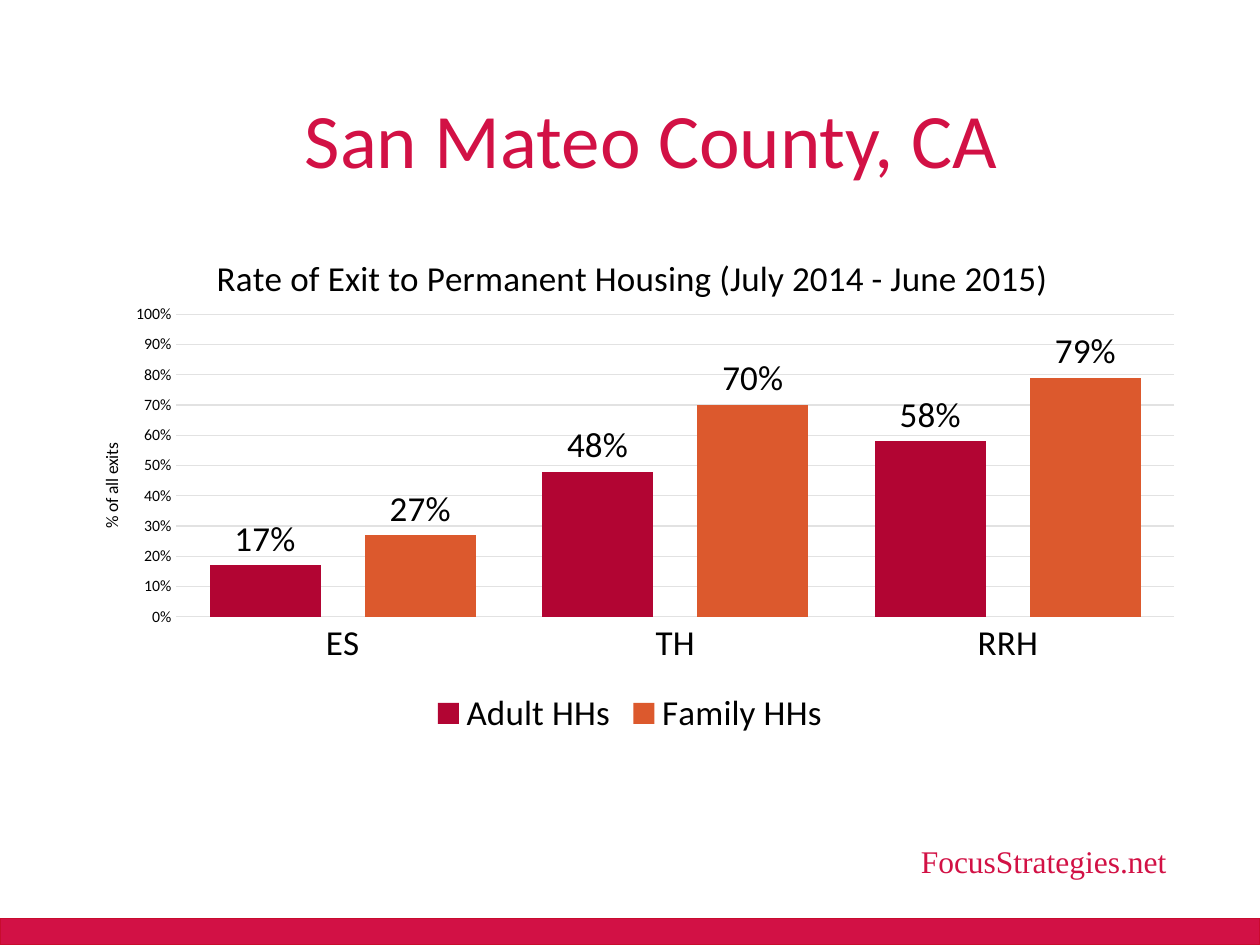
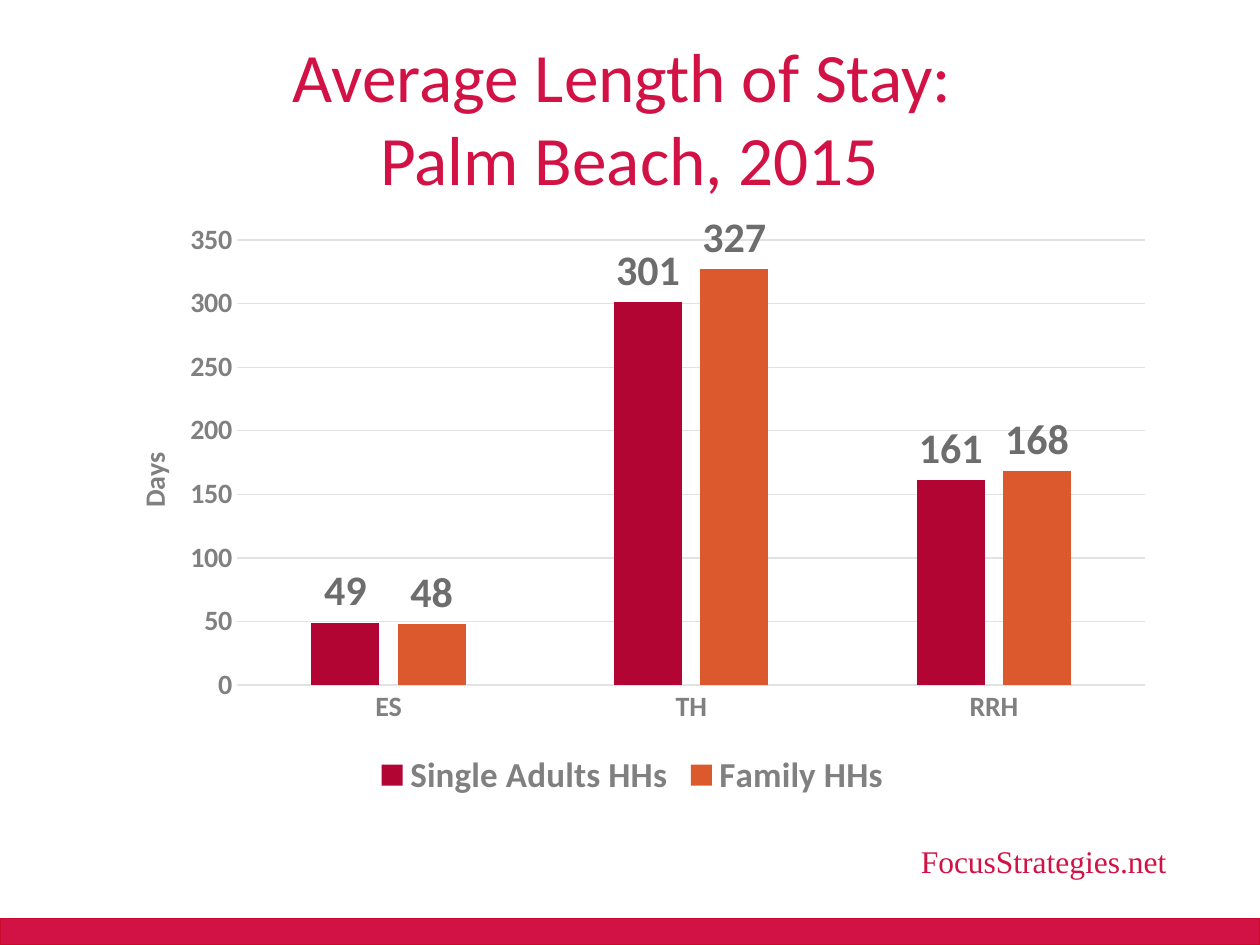
from dataclasses import dataclass
from typing import Any

import lxml.etree
import pptx
import pptx.chart.data
import pptx.dml.color
import pptx.enum.chart
import pptx.enum.shapes
import pptx.enum.text
import pptx.oxml.ns
import pptx.util

EMU_PER_PX = 9144  # 100 px to the inch
SLIDE_WIDTH, SLIDE_HEIGHT = 1000, 750


@dataclass(frozen=True)
class Theme:
    red: str = "D21145"
    band_edge: str = "C80C2E"
    grid: str = "E2E2E2"
    series: tuple[str, ...] = ("B20533", "DC592D")
    black: str = "000000"
    gray: str = "808080"
    dark_gray: str = "6D6D6D"
    sans: str = "Calibri"
    serif: str = "Times New Roman"
    footer_size: float = 18
    legend_size: float = 20
    chart_title_size: float = 20
    hairline: float = 0.75


THEME = Theme()


@dataclass(frozen=True)
class Box:
    left: int
    top: int
    width: int
    height: int

    def emu(self) -> list[int]:
        return [px(n) for n in (self.left, self.top, self.width, self.height)]


@dataclass(frozen=True)
class TextStyle:
    size: float
    color: str
    bold: bool = False
    name: str = THEME.sans


@dataclass(frozen=True)
class BarChart:
    box: Box
    categories: tuple[str, ...]
    series: dict[str, tuple[float, ...]]
    number_format: str
    maximum: float
    step: float
    gap: int
    overlap: int
    axis_title: str
    axis_title_style: TextStyle
    category_style: TextStyle
    value_style: TextStyle
    label_style: TextStyle
    legend_style: TextStyle
    plot_place: dict[str, float]
    axis_title_place: dict[str, float]
    title: str = ""


@dataclass(frozen=True)
class ChartPage:
    title: str
    title_box: Box
    title_size: float
    chart: BarChart


def px(length: int) -> int:
    return length * EMU_PER_PX


def rgb(color: str) -> pptx.dml.color.RGBColor:
    return pptx.dml.color.RGBColor.from_string(color)


def assign(target: Any, values: dict[str, Any]) -> None:
    for key, value in values.items():
        setattr(target, key, value)


def set_font(font: Any, style: TextStyle) -> None:
    assign(font, {"name": style.name, "size": pptx.util.Pt(style.size), "bold": style.bold})
    font.color.rgb = rgb(style.color)


def set_line(line: Any, color: str) -> None:
    line.color.rgb = rgb(color)
    line.width = pptx.util.Pt(THEME.hairline)


def write(frame: Any, text: str, style: TextStyle) -> Any:
    para = frame.paragraphs[0]
    para.text = text
    for span in para.runs:
        set_font(span.font, style)
    return para


def place(element: Any, position: dict[str, float]) -> None:
    """Give a chart part a fixed position, in fractions of the chart's size."""
    tag = pptx.oxml.ns.qn
    layout = element.find(tag("c:layout"))
    if layout is None:
        layout = lxml.etree.Element(tag("c:layout"))
        text = element.find(tag("c:tx"))
        element.insert(0 if text is None else 1, layout)
    for child in list(layout):
        layout.remove(child)
    manual = lxml.etree.SubElement(layout, tag("c:manualLayout"))
    settings: dict[str, Any] = {"xMode": "edge", "yMode": "edge"} | position
    if "w" in position:
        settings = {"layoutTarget": "inner"} | settings
    for key, value in settings.items():
        lxml.etree.SubElement(manual, tag(f"c:{key}")).set("val", str(value))


def add_text(page: Any, box: Box, text: str, style: TextStyle) -> Any:
    frame = page.shapes.add_textbox(*box.emu()).text_frame
    write(frame, text, style)
    return frame


def add_footer(page: Any) -> None:
    style = TextStyle(THEME.footer_size, THEME.red, name=THEME.serif)
    frame = add_text(page, Box(721, 663, 217, 40), "FocusStrategies.net", style)
    assign(frame, {"word_wrap": False,
                   "auto_size": pptx.enum.text.MSO_AUTO_SIZE.SHAPE_TO_FIT_TEXT})
    band = page.shapes.add_shape(pptx.enum.shapes.MSO_SHAPE.RECTANGLE,
                                 *Box(0, 729, SLIDE_WIDTH, 21).emu())
    band.shadow.inherit = False
    band.fill.solid()
    band.fill.fore_color.rgb = rgb(THEME.red)
    set_line(band.line, THEME.band_edge)


def add_title(page: Any, text: str, box: Box, size: float) -> None:
    frame = add_text(page, box, text, TextStyle(size, THEME.red))
    assign(frame, {"word_wrap": True,
                   "vertical_anchor": pptx.enum.text.MSO_ANCHOR.MIDDLE})
    frame.paragraphs[0].alignment = pptx.enum.text.PP_ALIGN.CENTER


def format_axes(chart: Any, design: BarChart) -> None:
    category, value = chart.category_axis, chart.value_axis
    for axis, style in ((category, design.category_style), (value, design.value_style)):
        assign(axis, {"major_tick_mark": pptx.enum.chart.XL_TICK_MARK.NONE,
                      "minor_tick_mark": pptx.enum.chart.XL_TICK_MARK.NONE})
        set_font(axis.tick_labels.font, style)
    set_line(category.format.line, THEME.grid)
    value.format.line.fill.background()
    assign(value, {"minimum_scale": 0, "maximum_scale": design.maximum,
                   "major_unit": design.step, "has_major_gridlines": True})
    set_line(value.major_gridlines.format.line, THEME.grid)
    assign(value.tick_labels, {"number_format": design.number_format,
                               "number_format_is_linked": False})
    write(value.axis_title.text_frame, design.axis_title, design.axis_title_style)


def format_bars(plot: Any, design: BarChart) -> None:
    assign(plot, {"gap_width": design.gap, "overlap": design.overlap,
                  "vary_by_categories": False})
    for series, color in zip(plot.series, THEME.series):
        series.format.fill.solid()
        series.format.fill.fore_color.rgb = rgb(color)
        series.invert_if_negative = False
        labels = series.data_labels
        assign(labels, {"show_value": True, "number_format": design.number_format,
                        "number_format_is_linked": False,
                        "position": pptx.enum.chart.XL_LABEL_POSITION.OUTSIDE_END})
        set_font(labels.font, design.label_style)


def add_bar_chart(page: Any, design: BarChart) -> None:
    data = pptx.chart.data.CategoryChartData(number_format=design.number_format)
    data.categories = design.categories
    for name, values in design.series.items():
        data.add_series(name, values)
    chart = page.shapes.add_chart(pptx.enum.chart.XL_CHART_TYPE.COLUMN_CLUSTERED,
                                  *design.box.emu(), data).chart
    set_font(chart.font, design.axis_title_style)
    chart.has_title = bool(design.title)
    if design.title:
        write(chart.chart_title.text_frame, design.title,
              TextStyle(THEME.chart_title_size, THEME.black))
    chart.has_legend = True
    assign(chart.legend, {"position": pptx.enum.chart.XL_LEGEND_POSITION.BOTTOM,
                          "include_in_layout": False})
    set_font(chart.legend.font, design.legend_style)
    format_axes(chart, design)
    format_bars(chart.plots[0], design)

    root = chart._chartSpace
    place(root.xpath("c:chart/c:plotArea")[0], design.plot_place)
    axis_title = root.xpath(".//c:valAx/c:title")[0]
    place(axis_title, design.axis_title_place)
    axis_title.xpath(".//a:bodyPr")[0].set("rot", "-5400000")
    for title in root.xpath("c:chart/c:title"):
        place(title, {"x": 0.13, "y": 0.05})


PROGRAMS = ("ES", "TH", "RRH")
BOLD_GRAY = TextStyle(16, THEME.gray, True)
BLACK_LABEL = TextStyle(20, THEME.black)

PAGES = (
    ChartPage(
        "San Mateo County, CA", Box(67, 47, 900, 125), 44,
        BarChart(
            box=Box(50, 175, 900, 414),
            categories=PROGRAMS,
            series={"Adult HHs": (0.17, 0.48, 0.58), "Family HHs": (0.27, 0.70, 0.79)},
            number_format="0%", maximum=1, step=0.1, gap=60, overlap=-40,
            axis_title="% of all exits",
            axis_title_style=TextStyle(10, THEME.black),
            category_style=BLACK_LABEL,
            value_style=TextStyle(9, THEME.black),
            label_style=BLACK_LABEL,
            legend_style=TextStyle(THEME.legend_size, THEME.black),
            plot_place={"x": 0.1, "y": 0.18, "w": 0.88, "h": 0.58},
            axis_title_place={"x": 0.03, "y": 0.42},
            title="Rate of Exit to Permanent Housing (July 2014 - June 2015)",
        ),
    ),
    ChartPage(
        "Average Length of Stay: \vPalm Beach, 2015", Box(50, 30, 900, 125), 39.6,
        BarChart(
            box=Box(78, 167, 848, 471),
            categories=PROGRAMS,
            series={"Single Adults HHs": (49, 301, 161), "Family HHs": (48, 327, 168)},
            number_format="0", maximum=350, step=50, gap=219, overlap=-27,
            axis_title="Days",
            axis_title_style=BOLD_GRAY,
            category_style=BOLD_GRAY,
            value_style=BOLD_GRAY,
            label_style=TextStyle(24, THEME.dark_gray, True),
            legend_style=TextStyle(THEME.legend_size, THEME.gray, True),
            plot_place={"x": 0.13, "y": 0.05, "w": 0.85, "h": 0.75},
            axis_title_place={"x": 0.03, "y": 0.4},
        ),
    ),
)


def main() -> None:
    deck = pptx.Presentation()
    assign(deck, {"slide_width": px(SLIDE_WIDTH), "slide_height": px(SLIDE_HEIGHT)})
    for content in PAGES:
        page = deck.slides.add_slide(deck.slide_layouts[6])
        add_footer(page)
        add_title(page, content.title, content.title_box, content.title_size)
        add_bar_chart(page, content.chart)
    deck.save("out.pptx")


if __name__ == "__main__":
    main()
